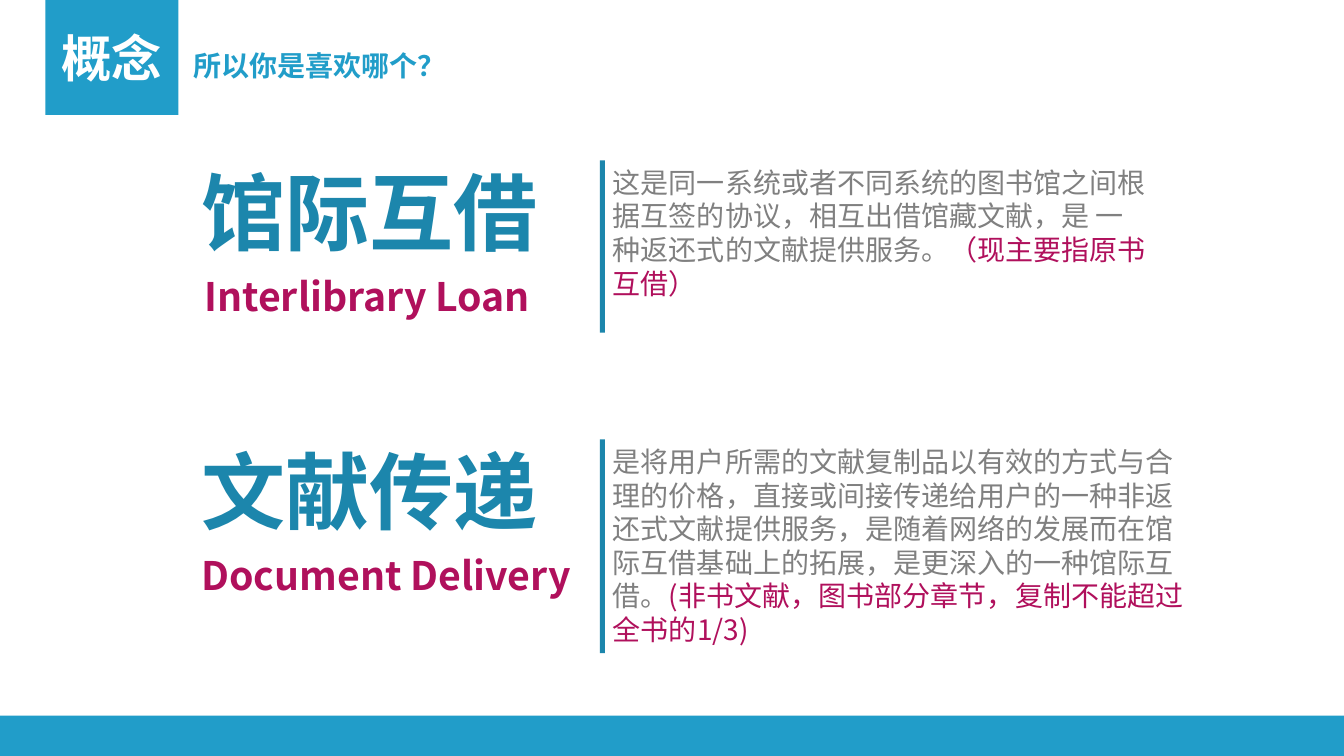
from lxml import etree
from pptx import Presentation
from pptx.dml.color import RGBColor
from pptx.enum.lang import MSO_LANGUAGE_ID
from pptx.enum.shapes import MSO_SHAPE
from pptx.enum.text import MSO_ANCHOR, PP_ALIGN
from pptx.oxml.ns import qn
from pptx.util import Inches, Pt

RECTANGLE = MSO_SHAPE.RECTANGLE
TOP, MIDDLE = MSO_ANCHOR.TOP, MSO_ANCHOR.MIDDLE
LEFT, CENTER = PP_ALIGN.LEFT, PP_ALIGN.CENTER
CHINESE = MSO_LANGUAGE_ID.SIMPLIFIED_CHINESE

FONT = "Noto Sans CJK SC"
COLORS = {
    "band": "219DC9",
    "term": "1C86AC",
    "accent": "B0105C",
    "body": "808080",
    "white": "FFFFFF",
}
TITLE_ONLY = 5

CONCEPTS = [
    {
        "top": 1.59, "height": 1.71, "body_width": 5.5,
        "term": "馆际互借", "english": "Interlibrary Loan", "english_left": 1.93,
        "body": "这是同一系统或者不同系统的图书馆之间根据互签的协议，相互出借馆藏文献，"
                "是 一种返还式的文献提供服务。",
        "remark": "（现主要指原书互借）",
    },
    {
        "top": 4.36, "height": 2.12, "body_width": 6,
        "term": "文献传递", "english": "Document Delivery", "english_left": 1.9,
        "body": "是将用户所需的文献复制品以有效的方式与合理的价格，直接或间接传递给用户的"
                "一种非返还式文献提供服务，是随着网络的发展而在馆 际互借基础上的拓展，"
                "是更深入的一种馆际互借。",
        "remark": "(非书文献，图书部分章节，复制不能超过全书的1/3)",
    },
]


def add_run(para, text, size, color, bold=False):
    run = para.add_run()
    run.text = text
    run.font.name = FONT
    run.font.size = Pt(size)
    run.font.bold = bold
    run.font.language_id = CHINESE
    run.font.color.rgb = RGBColor.from_string(COLORS[color])
    east_asian = etree.Element(qn("a:ea"), typeface=FONT)
    run.font._element.find(qn("a:latin")).addnext(east_asian)


def format_frame(frame, wrap, anchor=TOP, align=LEFT):
    """Set wrapping and alignment, and return the first paragraph."""
    frame.word_wrap = wrap
    frame.vertical_anchor = anchor
    para = frame.paragraphs[0]
    para.alignment = align
    return para


def add_text(page, left, top, width, height, wrap=True):
    """Add a text box and return its first paragraph."""
    box = page.shapes.add_textbox(
        Inches(left), Inches(top), Inches(width), Inches(height))
    return format_frame(box.text_frame, wrap)


def add_block(page, left, top, width, height, color):
    block = page.shapes.add_shape(
        RECTANGLE, Inches(left), Inches(top), Inches(width), Inches(height))
    block.shadow.inherit = False
    block.fill.solid()
    block.fill.fore_color.rgb = RGBColor.from_string(COLORS[color])
    block.line.fill.background()
    return block


def set_title(page, text):
    title = page.shapes.title
    title.left, title.top = Inches(1.82), Inches(0.43)
    title.width, title.height = Inches(2.73), Inches(0.44)
    para = format_frame(title.text_frame, wrap=False)
    add_run(para, text, 20, "band", bold=True)


def add_concept(page, concept):
    """Add a term with its English name, a divider and its definition."""
    top, height = concept["top"], concept["height"]
    term = add_text(page, 1.9, top - 0.05, 3.57, 1.11, wrap=False)
    add_run(term, concept["term"], 60, "term", bold=True)
    english = add_text(page, concept["english_left"], top + 1.06, 4.24, 0.57)
    add_run(english, concept["english"], 28, "accent", bold=True)
    definition = add_text(page, 5.98, top, concept["body_width"], height)
    add_run(definition, concept["body"], 20, "body")
    add_run(definition, concept["remark"], 20, "accent")
    add_block(page, 5.95, top, 0.05, height, "term")


def main():
    deck = Presentation()
    deck.slide_width, deck.slide_height = Inches(13.33), Inches(7.5)
    page = deck.slides.add_slide(deck.slide_layouts[TITLE_ONLY])

    set_title(page, "所以你是喜欢哪个？")
    add_block(page, 0, 7.1, 13.33, 0.4, "band")
    tag = add_block(page, 0.45, 0, 1.32, 1.14, "band")
    para = format_frame(tag.text_frame, wrap=False, anchor=MIDDLE, align=CENTER)
    add_run(para, "概念", 36, "white", bold=True)

    for concept in CONCEPTS:
        add_concept(page, concept)
    deck.save("out.pptx")


if __name__ == "__main__":
    main()
